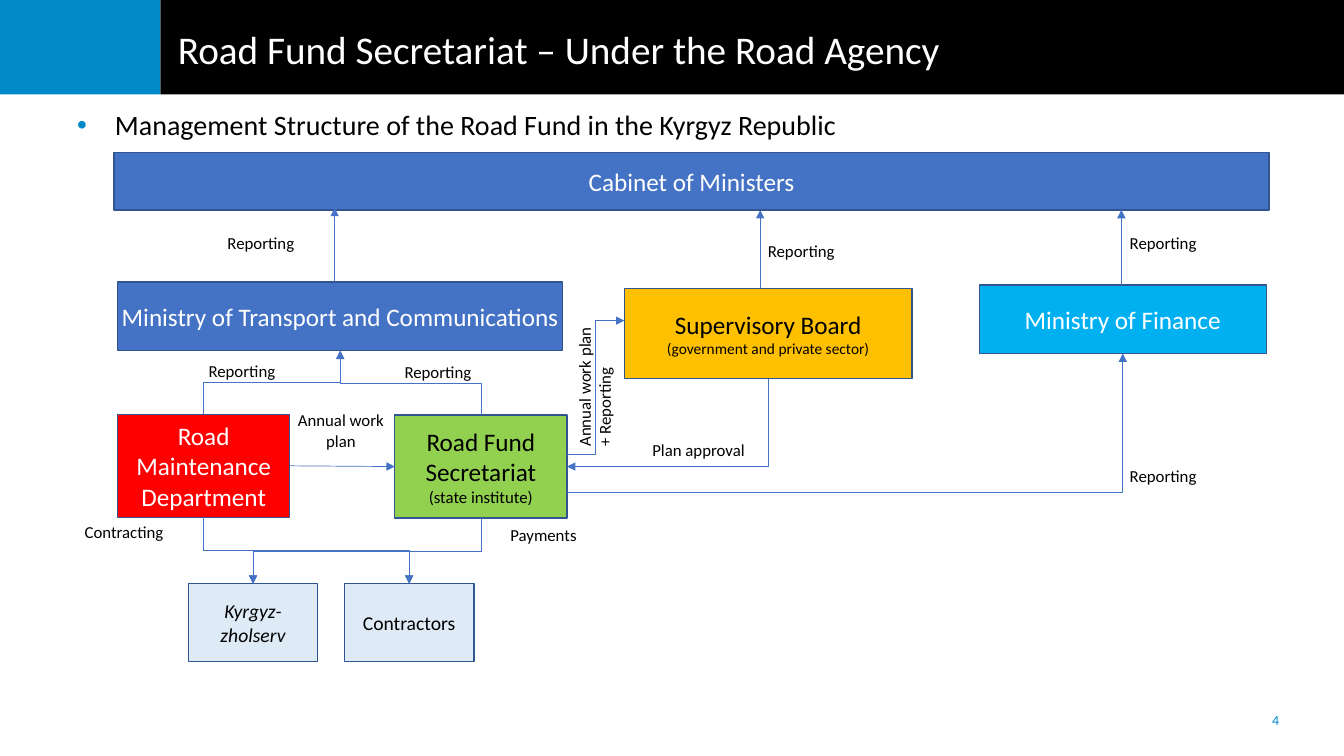
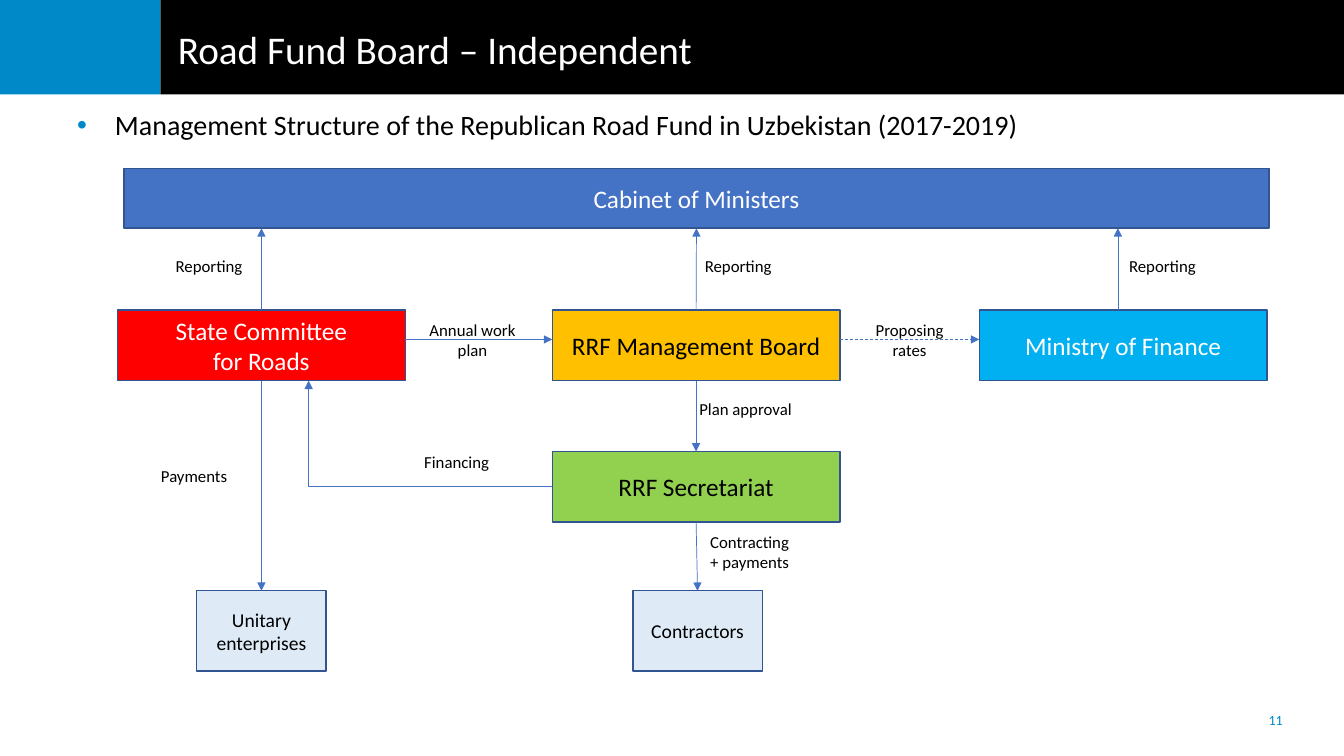
"""Build two slides on how road funds are managed."""
from lxml.etree import SubElement
from pptx import Presentation
from pptx.dml.color import RGBColor as RGB
from pptx.enum.dml import MSO_LINE as DASH
from pptx.enum.shapes import MSO_CONNECTOR as JOIN, MSO_SHAPE as SHAPE
from pptx.enum.text import MSO_ANCHOR as ANCHOR, PP_ALIGN as ALIGN
from pptx.oxml.ns import qn
from pptx.util import Pt

BLACK = RGB(0x00, 0x00, 0x00)
WHITE = RGB(0xFF, 0xFF, 0xFF)
BRAND = RGB(0x00, 0x89, 0xC9)
BLUE = RGB(0x44, 0x72, 0xC4)
EDGE = RGB(0x32, 0x54, 0x91)
SKY = RGB(0x00, 0xB0, 0xF0)
RED = RGB(0xFF, 0x00, 0x00)
GREEN = RGB(0x92, 0xD0, 0x50)
GOLD = RGB(0xFF, 0xC0, 0x00)
PALE = RGB(0xDE, 0xEB, 0xF7)
LEFT, MID = ALIGN.LEFT, ALIGN.CENTER
SIDES = [(0.5, 0), (0, 0.5), (0.5, 1), (1, 0.5)]


def write(shape, text, size, color, align=LEFT, anchor=ANCHOR.MIDDLE, pad=0):
    frame = shape.text_frame
    frame.word_wrap = True
    frame.vertical_anchor = anchor
    frame.margin_left = frame.margin_right = Pt(pad)
    frame.margin_top = frame.margin_bottom = Pt(pad / 2)
    frame.text = text
    for para in frame.paragraphs:
        para.alignment = align
        para.font.name = "Calibri"
        para.font.size = Pt(size)
        para.font.color.rgb = color


def link(slide, boxes, start, end, kind="line", upright=False, dash=False):
    spots = []
    for spot in (start, end):
        if spot[0] in boxes:
            box, (across, down) = boxes[spot[0]], SIDES[spot[1]]
            spots.append((box.left.pt + across * box.width.pt,
                          box.top.pt + down * box.height.pt))
        else:
            spots.append(spot)
    (x1, y1), (x2, y2) = spots
    dx, dy = x2 - x1, y2 - y1
    if upright:
        mx, my = (x1 + x2) / 2, (y1 + y2) / 2
        half = abs(dx) / 2 * (-1 if dx * dy > 0 else 1)
        x1, x2 = mx - abs(dy) / 2, mx + abs(dy) / 2
        y1, y2 = my - half, my + half
    style = JOIN.STRAIGHT if kind == "line" else JOIN.ELBOW
    wire = slide.shapes.add_connector(style, Pt(x1), Pt(y1), Pt(x2), Pt(y2))
    props = wire.element.spPr
    if kind == "line":
        for spot, glue in ((start, wire.begin_connect), (end, wire.end_connect)):
            if spot[0] in boxes:
                glue(boxes[spot[0]], spot[1])
    else:
        props.find(qn("a:prstGeom")).set("prst", kind)
    if upright:
        props.find(qn("a:xfrm")).set("rot", "5400000" if dy > 0 else "16200000")
    wire.line.color.rgb = BLUE
    wire.line.width = Pt(0.5)
    if dash:
        wire.line.dash_style = DASH.DASH
    SubElement(props.find(qn("a:ln")), qn("a:tailEnd"), type="triangle")
    SubElement(props, qn("a:effectLst"))


BENT, TURN = "bentConnector3", "bentConnector2"
PAGES = [
    {
        "title": "Road Fund Secretariat – Under the Road Agency",
        "lead": "Management Structure of the Road Fund in the Kyrgyz Republic",
        "page": "4",
        "boxes": [
            ("cabinet", 81.5, 109, 825, 41, BLUE, "Cabinet of Ministers"),
            ("transport", 84, 201.5, 318, 49, BLUE,
             "Ministry of Transport and Communications"),
            ("finance", 699.5, 203.5, 205, 49, SKY, "Ministry of Finance"),
            ("roads", 84, 296, 123, 73.5, RED, "Road Maintenance Department"),
            ("office", 282, 296.5, 123, 73.5, GREEN,
             "Road Fund Secretariat\n(state institute)"),
            ("board", 446, 206, 205.5, 64.5, GOLD,
             "Supervisory Board\n(government and private sector)"),
            ("state", 134.5, 417, 92.5, 55.5, PALE, "Kyrgyz-\nzholserv"),
            ("private", 246, 417, 92.5, 55.5, PALE, "Contractors"),
        ],
        "links": [
            ((239, 201.5), (239, 148.5)),
            ((543, 206), (543, 150)),
            ((801, 203.5), (801, 150)),
            (("roads", 3), ("office", 1)),
            ((405, 324.5), (446, 229), BENT),
            (("board", 2), ("office", 3), TURN, True),
            ((405, 352), ("finance", 2), TURN),
            (("roads", 0), ("transport", 2), BENT, True),
            (("office", 0), ("transport", 2), BENT, True),
            (("roads", 2), ("state", 0), BENT, True),
            (("roads", 2), ("private", 0), BENT, True),
            (("office", 2), ("state", 0), BENT, True),
            (("office", 2), ("private", 0), BENT, True),
        ],
        "notes": [
            (162.5, 166.5, 124, LEFT, "Reporting"),
            (548.5, 172, 124, LEFT, "Reporting"),
            (807, 166.5, 124, LEFT, "Reporting"),
            (149, 258, 66, LEFT, "Reporting"),
            (289, 258.5, 66, LEFT, "Reporting"),
            (807, 332.5, 66, LEFT, "Reporting"),
            (202.5, 293, 82, MID, "Annual work plan"),
            (430.5, 314, 137, MID, "Plan approval"),
            (326, 374.5, 124.5, MID, "Payments"),
            (60.5, 373, 124, LEFT, "Contracting"),
            (372, 236, 121, LEFT, "Annual work plan\n+ Reporting", 270),
        ],
    },
    {
        "title": "Road Fund Board – Independent",
        "lead": "Management Structure of the Republican Road Fund in Uzbekistan "
                "(2017-2019)",
        "page": "11",
        "boxes": [
            ("cabinet", 88.5, 120.5, 818, 42.5, BLUE, "Cabinet of Ministers"),
            ("roads", 84, 221.5, 205.5, 50.5, RED, "State Committee\nfor Roads"),
            ("finance", 699.5, 221.5, 205.5, 50.5, SKY, "Ministry of Finance"),
            ("office", 394.5, 322.5, 205.5, 50.5, GREEN, "RRF Secretariat"),
            ("board", 394.5, 221.5, 205.5, 50.5, GOLD, "RRF Management Board"),
            ("state", 140.5, 422, 92.5, 57.5, PALE, "Unitary enterprises"),
            ("private", 452, 422, 92.5, 57.5, PALE, "Contractors"),
        ],
        "links": [
            (("roads", 0), (186.75, 163)),
            (("board", 0), ("cabinet", 2)),
            ((798.5, 221.5), (798.5, 163)),
            ((289.5, 242.5), (394.5, 242.5)),
            ((600, 242.5), (699.5, 242.5), "line", False, True),
            (("board", 2), ("office", 0)),
            (("office", 2), ("private", 0)),
            (("roads", 2), ("state", 0)),
            (("office", 1), (220.5, 272), TURN),
        ],
        "notes": [
            (125.5, 183, 124, LEFT, "Reporting"),
            (503.5, 182.5, 124, LEFT, "Reporting"),
            (806.5, 182.5, 124, LEFT, "Reporting"),
            (296.5, 228.5, 82, MID, "Annual work plan"),
            (607, 228.5, 85.5, MID, "Proposing\nrates"),
            (499.5, 284.5, 82, LEFT, "Plan approval"),
            (303, 323, 82, LEFT, "Financing"),
            (115, 332.5, 124, LEFT, "Payments"),
            (489.5, 379.5, 92, MID, "Contracting\n+ payments"),
        ],
    },
]

deck = Presentation()
deck.slide_width, deck.slide_height = Pt(960), Pt(540)
drawn = []
for page in PAGES:
    slide = deck.slides.add_slide(deck.slide_layouts[6])
    shapes = slide.shapes
    for x, w, fill in ((114.5, 845.5, BLACK), (0, 114.5, BRAND)):
        band = shapes.add_shape(SHAPE.RECTANGLE, Pt(x), 0, Pt(w), Pt(67.5))
        band.shadow.inherit = False
        band.fill.solid()
        band.fill.fore_color.rgb = fill
        band.line.fill.background()

    title = shapes.add_textbox(Pt(120), Pt(6), Pt(840), Pt(57))
    write(title, page["title"], 28, WHITE, pad=7.2)
    lead = shapes.add_textbox(Pt(48), Pt(73.5), Pt(912), Pt(36))
    write(lead, page["lead"], 20, BLACK, anchor=ANCHOR.TOP, pad=7.2)
    para = lead.text_frame.paragraphs[0]
    para.space_before = Pt(4)
    props = para._p.get_or_add_pPr()
    props.set("marL", str(Pt(27)))
    props.set("indent", str(Pt(-27)))
    tint = SubElement(props, qn("a:buClr"))
    SubElement(tint, qn("a:srgbClr"), val=str(BRAND))
    SubElement(props, qn("a:buFont"), typeface="Arial")
    SubElement(props, qn("a:buChar"), char="•")
    number = shapes.add_textbox(Pt(885), Pt(500.5), Pt(52.5), Pt(28))
    write(number, page["page"], 10, BRAND, MID, pad=7.2)

    boxes = {}
    for name, x, y, w, h, fill, text in page["boxes"]:
        box = shapes.add_shape(SHAPE.RECTANGLE, Pt(x), Pt(y), Pt(w), Pt(h))
        box.shadow.inherit = False
        box.fill.solid()
        box.fill.fore_color.rgb = fill
        box.line.color.rgb = EDGE
        box.line.width = Pt(1)
        ink = WHITE if fill in (BLUE, SKY, RED) else BLACK
        write(box, text, 14 if fill == PALE else 18, ink, MID)
        boxes[name] = box
    drawn.append(boxes)

    for ends in page["links"]:
        link(slide, boxes, *ends)
    for x, y, w, align, text, *turn in page["notes"]:
        note = shapes.add_textbox(Pt(x), Pt(y), Pt(w), Pt(45 if turn else 30))
        write(note, text, 12, BLACK, align, ANCHOR.TOP)
        note.rotation = turn[0] if turn else 0

for name, size in (("office", 12), ("board", 11)):
    drawn[0][name].text_frame.paragraphs[1].font.size = Pt(size)
for para in drawn[0]["state"].text_frame.paragraphs:
    para.font.italic = True

deck.save("out.pptx")
